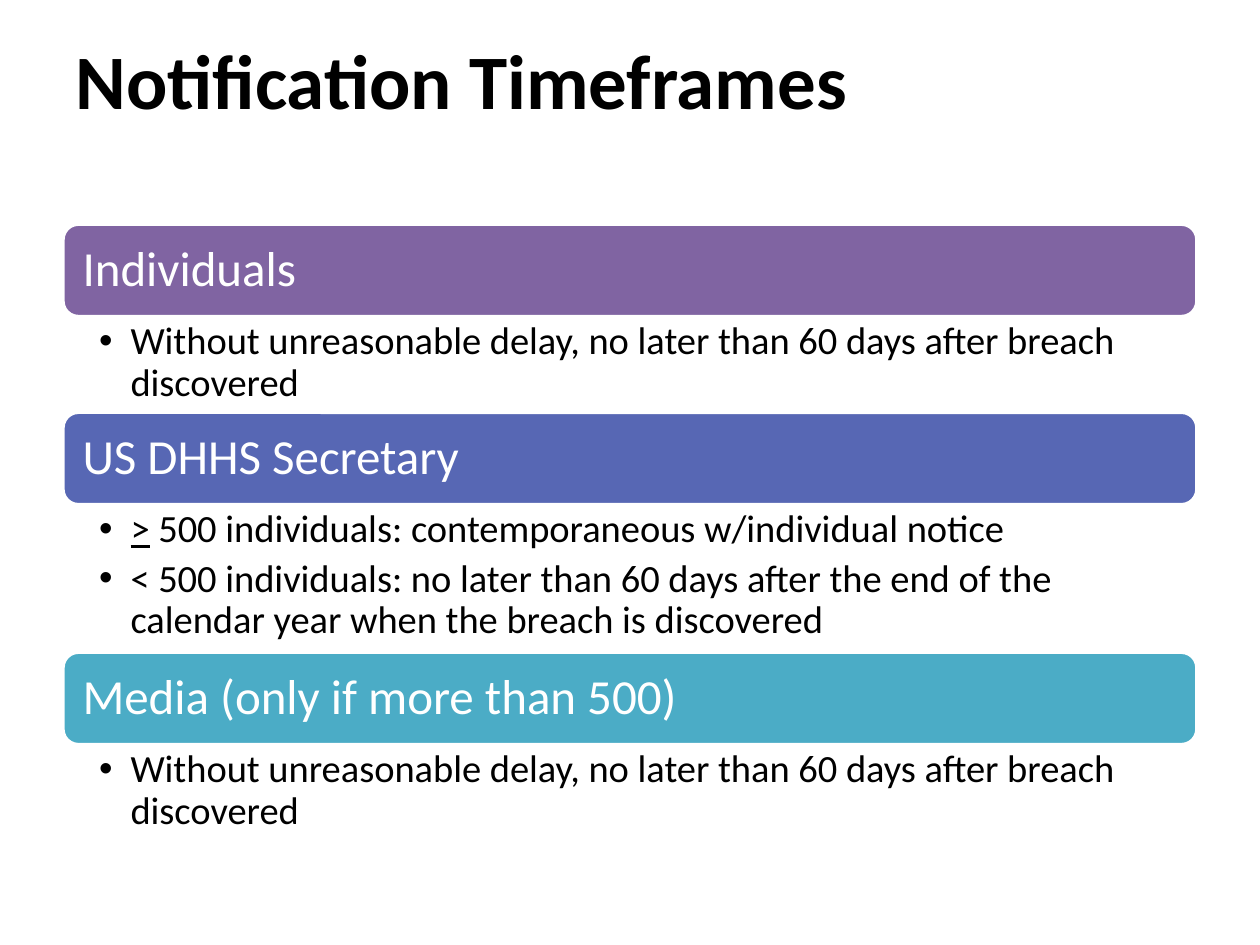
from dataclasses import dataclass

from lxml.etree import SubElement
from pptx import Presentation
from pptx.dml.color import RGBColor as Rgb
from pptx.enum.shapes import MSO_SHAPE as Shape
from pptx.enum.text import MSO_ANCHOR as Anchor, PP_ALIGN as Align
from pptx.oxml.ns import qn
from pptx.slide import Slide
from pptx.text.text import TextFrame, _Paragraph as Para
from pptx.util import Pt

HUES = {
    "black": "000000",
    "white": "FFFFFF",
    "purple": "8064A2",
    "blue": "5767B4",
    "teal": "4BACC6",
}
LEFT, TOP, WIDTH, BAR = 36, 128.1, 648, 52.8
DELAY = "Without unreasonable delay, no later than 60 days after breach discovered"


@dataclass
class Run:
    text: str
    under: bool = False


@dataclass
class Group:
    head: str
    hue: str
    height: float
    points: list[list[Run]]


GROUPS = [
    Group("Individuals", "purple", 54.7, [[Run(DELAY)]]),
    Group("US DHHS Secretary", "blue", 84.3, [
        [Run(">", True), Run(" 500 individuals: contemporaneous w/individual notice")],
        [Run("< 500 individuals: no later than 60 days after the end of the "
             "calendar year when the breach is discovered")],
    ]),
    Group("Media (only if more than 500)", "teal", 54.7, [[Run(DELAY)]]),
]


def color(name: str) -> Rgb:
    return Rgb.from_string(HUES[name])


def set_font(para: Para, size: float, hue: str, bold: bool = False) -> None:
    font = para.font
    font.name, font.size, font.bold = "Calibri", Pt(size), bold
    font.color.rgb = color(hue)
    para.alignment = Align.LEFT


def set_frame(frame: TextFrame, anchor: Anchor, left: float, right: float, edge: float) -> None:
    frame.word_wrap = True
    frame.vertical_anchor = anchor
    frame.margin_left, frame.margin_right = Pt(left), Pt(right)
    frame.margin_top = frame.margin_bottom = Pt(edge)


def add_bullet(para: Para) -> None:
    props = para._p.get_or_add_pPr()
    props.set("marL", str(Pt(18)))
    props.set("indent", str(Pt(-18)))
    SubElement(props, qn("a:buFont"), typeface="Arial")
    SubElement(props, qn("a:buChar"), char="•")


def draw_title(slide: Slide, text: str) -> None:
    box = slide.shapes.add_textbox(Pt(LEFT), Pt(0), Pt(WIDTH), Pt(90))
    set_frame(box.text_frame, Anchor.MIDDLE, 7.2, 7.2, 3.6)
    para = box.text_frame.paragraphs[0]
    para.text = text
    set_font(para, 44, "black", True)


def draw_bar(slide: Slide, group: Group, top: float) -> None:
    bar = slide.shapes.add_shape(
        Shape.ROUNDED_RECTANGLE, Pt(LEFT), Pt(top), Pt(WIDTH), Pt(BAR))
    bar.shadow.inherit = False
    bar.fill.solid()
    bar.fill.fore_color.rgb = color(group.hue)
    bar.line.color.rgb = color("white")
    bar.line.width = Pt(2)
    set_frame(bar.text_frame, Anchor.MIDDLE, 8.64, 8.64, 8.64)
    para = bar.text_frame.paragraphs[0]
    para.text = group.head
    para.line_spacing = 0.9
    set_font(para, 28, "white")


def draw_points(slide: Slide, group: Group, top: float) -> None:
    box = slide.shapes.add_textbox(Pt(LEFT), Pt(top), Pt(WIDTH), Pt(group.height))
    frame = box.text_frame
    set_frame(frame, Anchor.TOP, 20.6, 15.6, 2.8)
    for num, point in enumerate(group.points):
        para = frame.add_paragraph() if num else frame.paragraphs[0]
        add_bullet(para)
        para.line_spacing = 0.9
        para.space_after = Pt(4.4)
        set_font(para, 22, "black")
        for part in point:
            run = para.add_run()
            run.text = part.text
            if part.under:
                run.font.underline = True


def main() -> None:
    deck = Presentation()
    deck.slide_width, deck.slide_height = Pt(720), Pt(540)
    slide = deck.slides.add_slide(deck.slide_layouts[6])
    draw_title(slide, "Notification Timeframes")
    top = TOP
    for group in GROUPS:
        draw_bar(slide, group, top)
        draw_points(slide, group, top + BAR)
        top += BAR + group.height
    deck.save("out.pptx")


if __name__ == "__main__":
    main()
